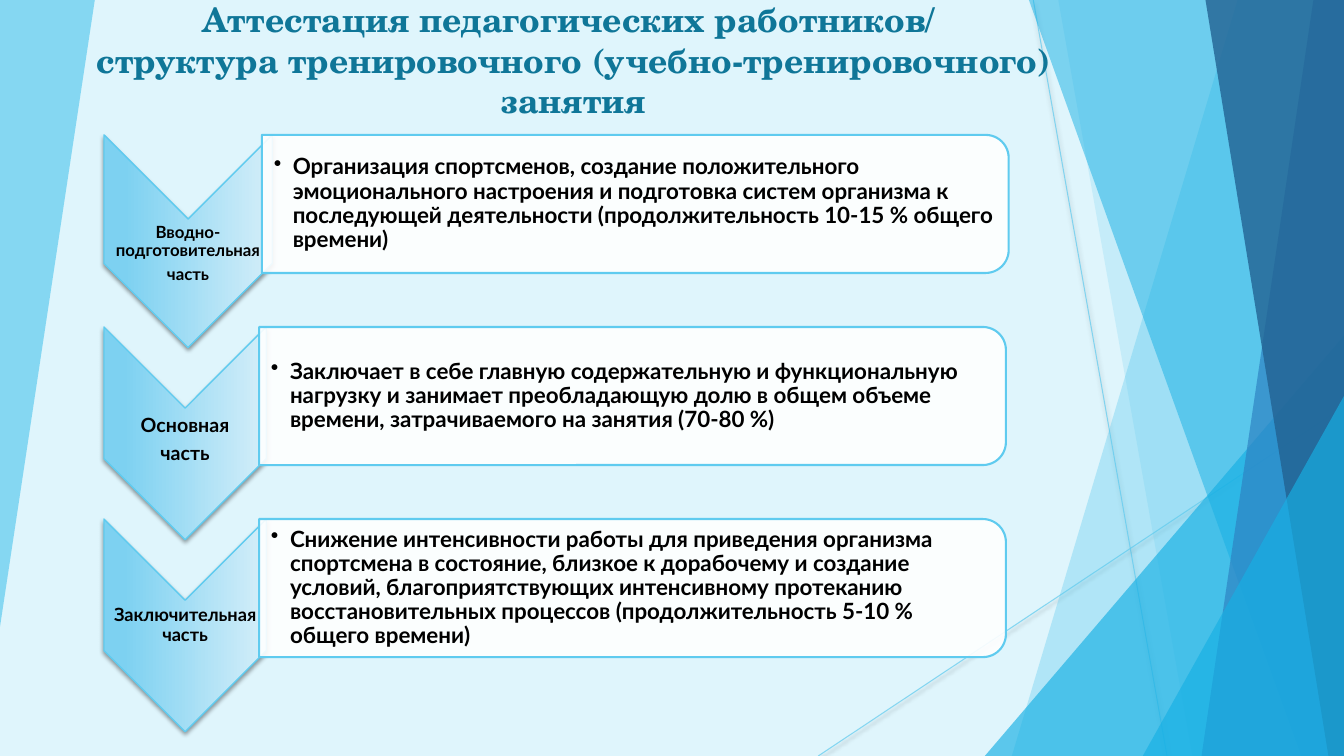
from dataclasses import dataclass

from lxml.etree import SubElement
from pptx import Presentation
from pptx.dml.color import RGBColor
from pptx.enum.shapes import MSO_CONNECTOR, MSO_SHAPE
from pptx.enum.text import MSO_ANCHOR, MSO_AUTO_SIZE, PP_ALIGN
from pptx.oxml.ns import qn
from pptx.util import Cm, Pt

# Slide and row geometry, in centimetres
WIDTH, HEIGHT = 33.87, 19.05
ROW_TOP, ROW_PITCH = 3.40, 4.84
ARROW_LEFT, ARROW_HEIGHT = 2.62, 5.36
PANEL_WIDTH, PANEL_HEIGHT = 18.82, 3.48
LABEL_HEIGHT = 1.27


@dataclass(frozen=True)
class Theme:
    background: str = "DFF5FC"
    sky: str = "5FCBEF"
    azure: str = "17B0E4"
    blue: str = "2E83C3"
    navy: str = "226292"
    arrow_light: str = "D4EEF9"
    arrow_dark: str = "7DD1F1"
    panel: str = "FFFFFF"
    title: str = "0F7698"
    text: str = "000000"
    shadow: str = "000000"
    title_font: str = "TeX Gyre Schola"
    body_font: str = "Lato"
    title_size: int = 24
    body_size: int = 16


THEME = Theme()


def rgb(value):
    return RGBColor.from_string(value)


def write_text(frame, lines, *, font=THEME.body_font, size=THEME.body_size, color=THEME.text,
               align=PP_ALIGN.LEFT, spacing=0.9, after=0.0, insets=None, bullet=False):
    """Fill a frame with bold paragraphs; `after` is a share of the type size."""
    frame.word_wrap = True
    frame.auto_size = MSO_AUTO_SIZE.NONE
    frame.vertical_anchor = MSO_ANCHOR.MIDDLE
    if insets:
        frame.margin_left, frame.margin_top, frame.margin_right, frame.margin_bottom = map(Cm, insets)
    for index, line in enumerate(lines):
        paragraph = frame.add_paragraph() if index else frame.paragraphs[0]
        paragraph.text = line
        paragraph.alignment = align
        paragraph.line_spacing = spacing
        paragraph.space_after = Pt(after * size)
        for run in paragraph.runs:
            run.font.name = font
            run.font.size = Pt(size)
            run.font.bold = True
            run.font.color.rgb = rgb(color)
        if bullet:
            properties = paragraph._p.get_or_add_pPr()
            properties.set("marL", str(Cm(0.48)))
            properties.set("indent", str(-Cm(0.48)))
            SubElement(properties, qn("a:buChar")).set("char", "•")


class SlideBuilder:
    def __init__(self, slide, theme):
        self.slide = slide
        self.theme = theme
        self.shapes = slide.shapes
        fill = slide.background.fill
        fill.solid()
        fill.fore_color.rgb = rgb(theme.background)

    def set_alpha(self, color_fill, percent):
        color = color_fill._xPr.find(".//" + qn("a:srgbClr"))
        SubElement(color, qn("a:alpha")).set("val", str(percent * 1000))

    def paint(self, shape, color, alpha):
        shape.shadow.inherit = False
        shape.fill.solid()
        shape.fill.fore_color.rgb = rgb(color)
        self.set_alpha(shape.fill, alpha)
        shape.line.fill.background()

    def outline(self, shape, width):
        shape.line.color.rgb = rgb(self.theme.sky)
        shape.line.width = Pt(width)

    def drop_shadow(self, shape):
        properties = shape._element.spPr
        effects = properties.find(qn("a:effectLst"))
        if effects is None:
            effects = SubElement(properties, qn("a:effectLst"))
        outer = SubElement(effects, qn("a:outerShdw"), blurRad=str(Pt(3.1)),
                           dist=str(Pt(1.6)), dir="5400000", rotWithShape="0")
        color = SubElement(outer, qn("a:srgbClr"), val=self.theme.shadow)
        SubElement(color, qn("a:alpha"), val="38000")

    def polygon(self, points, color, alpha):
        start, *others = [(Cm(x), Cm(y)) for x, y in points]
        builder = self.shapes.build_freeform(*start, scale=1.0)
        builder.add_line_segments(others, close=True)
        self.paint(builder.convert_to_shape(), color, alpha)

    def band(self, top_x, bottom_x, color, alpha):
        """Strip from a slanted left edge to the right side of the slide."""
        self.polygon([(top_x, 0), (WIDTH, 0), (WIDTH, HEIGHT), (bottom_x, HEIGHT)], color, alpha)

    def corner(self, left, top, color, alpha):
        """Right triangle filling the lower right corner."""
        triangle = self.shapes.add_shape(MSO_SHAPE.ISOSCELES_TRIANGLE, Cm(left), Cm(top),
                                         Cm(WIDTH - left), Cm(HEIGHT - top))
        triangle.adjustments[0] = 1
        self.paint(triangle, color, alpha)

    def ray(self, *ends):
        line = self.shapes.add_connector(MSO_CONNECTOR.STRAIGHT, *map(Cm, ends))
        self.outline(line, 0.75)
        self.set_alpha(line.line.fill, 70)
        self.drop_shadow(line)

    def title(self, text, left, top, width, height):
        heading = self.shapes.title
        heading.left, heading.top, heading.width, heading.height = map(Cm, (left, top, width, height))
        write_text(heading.text_frame, [text], font=self.theme.title_font, size=self.theme.title_size,
                   color=self.theme.title, align=PP_ALIGN.CENTER, spacing=1.0)
        self.shapes._spTree.append(heading._element)  # in front of the decoration

    def turned(self, kind, left, top, width, height):
        """Shape turned by 90 degrees that covers the given box."""
        shape = self.shapes.add_shape(kind, Cm(left + (width - height) / 2),
                                      Cm(top + (height - width) / 2), Cm(height), Cm(width))
        shape.rotation = 90
        shape.shadow.inherit = False
        return shape

    def text(self, lines, left, top, width, height, **style):
        box = self.shapes.add_textbox(Cm(left), Cm(top), Cm(width), Cm(height))
        write_text(box.text_frame, lines, **style)

    def arrow(self, top, width):
        chevron = self.turned(MSO_SHAPE.CHEVRON, ARROW_LEFT, top, width, ARROW_HEIGHT)
        chevron.fill.gradient()
        chevron.fill.gradient_angle = 270
        stops = ((0, self.theme.arrow_light), (0.88, self.theme.arrow_dark))
        for stop, (position, color) in zip(chevron.fill.gradient_stops, stops):
            stop.position = position
            stop.color.rgb = rgb(color)
        self.outline(chevron, 1)
        self.drop_shadow(chevron)

    def panel(self, left, top, description):
        card = self.turned(MSO_SHAPE.ROUND_2_SAME_RECTANGLE, left, top, PANEL_WIDTH, PANEL_HEIGHT)
        self.paint(card, self.theme.panel, 90)
        self.outline(card, 1.5)
        self.text([description], left, top + 0.17, PANEL_WIDTH - 0.18, PANEL_HEIGHT - 0.34,
                  insets=(0.3, 0.03, 0.03, 0.03), bullet=True)


# Lesson parts: label lines, label size, label centre, arrow width, panel left, description
LESSON_PARTS = [
    (["Вводно-подготовительная", "часть"], 12, 3.00, 4.24, 6.60,
     "Организация спортсменов, создание положительного эмоционального настроения и подготовка "
     "систем организма к последующей деятельности (продолжительность 10-15 % общего времени)"),
    (["Основная", "часть"], 14, 2.86, 4.09, 6.53,
     "Заключает в себе главную содержательную и функциональную нагрузку и занимает преобладающую "
     "долю в общем объеме времени, затрачиваемого на занятия (70-80 %)"),
    (["Заключительная часть"], 13, 2.69, 4.09, 6.53,
     "Снижение интенсивности работы для приведения организма спортсмена в состояние, близкое к "
     "дорабочему и создание условий, благоприятствующих интенсивному протеканию "
     "восстановительных процессов (продолжительность 5-10 % общего времени)"),
]


def main():
    deck = Presentation()
    deck.slide_width, deck.slide_height = Cm(WIDTH), Cm(HEIGHT)
    page = SlideBuilder(deck.slides.add_slide(deck.slide_layouts[5]), THEME)

    # Background facets
    page.polygon([(0, 0), (2.39, 0), (0, 15.8)], THEME.sky, 70)
    page.ray(26.04, 0, 29.41, HEIGHT)
    page.ray(WIDTH, 10.24, 20.62, HEIGHT)
    page.band(31.19, 25.5, THEME.sky, 36)
    page.band(26.67, 30.05, THEME.sky, 20)
    page.corner(24.82, 8.46, THEME.azure, 66)
    page.band(25.93, 32.79, THEME.azure, 50)
    page.band(33.1, 30.28, THEME.blue, 70)
    page.band(30.38, 33.48, THEME.navy, 80)
    page.corner(28.8, 9.98, THEME.azure, 66)

    # Heading
    page.title("Аттестация педагогических работников/ \vструктура тренировочного "
               "(учебно-тренировочного) занятия", 2.18, 0.03, 24.56, 2.95)

    # Lesson structure
    for row, (label, size, centre, width, panel_left, description) in enumerate(LESSON_PARTS):
        top = ROW_TOP + row * ROW_PITCH
        page.arrow(top, width)
        page.text(label, ARROW_LEFT, top + centre - LABEL_HEIGHT / 2, width, LABEL_HEIGHT, size=size,
                  align=PP_ALIGN.CENTER, after=0.35, insets=(0.03,) * 4)
        page.panel(panel_left, top, description)

    deck.save("out.pptx")


if __name__ == "__main__":
    main()
